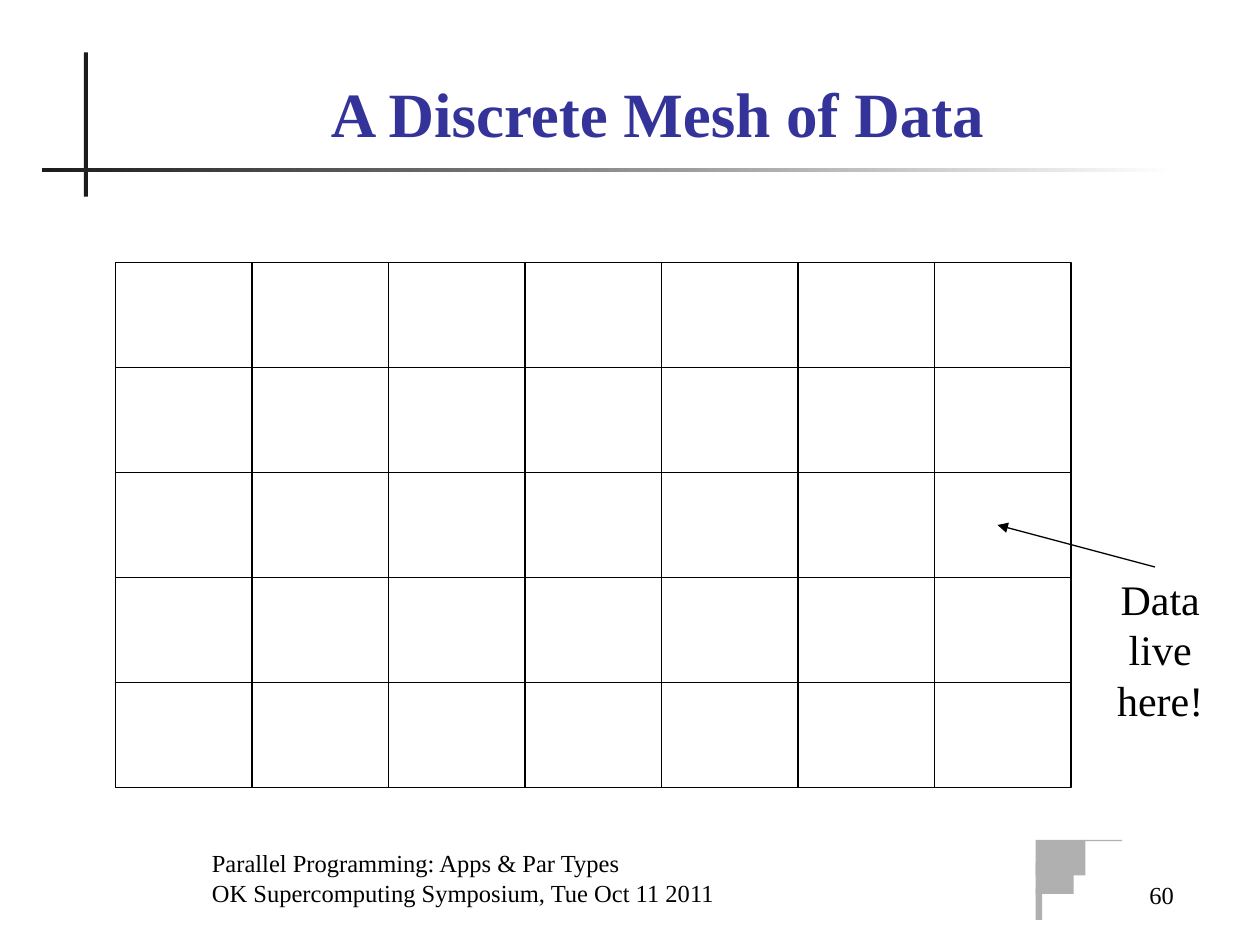
from dataclasses import dataclass

from lxml.etree import SubElement
from pptx import Presentation
from pptx.dml.color import RGBColor
from pptx.enum.shapes import MSO_CONNECTOR, MSO_SHAPE
from pptx.enum.text import MSO_ANCHOR, MSO_AUTO_SIZE, PP_ALIGN
from pptx.oxml.ns import qn
from pptx.shapes.autoshape import Shape
from pptx.slide import Slide
from pptx.util import Emu, Pt

EMU_PER_PX = 9525


@dataclass(frozen=True)
class Theme:
    font: str = "Times New Roman"
    ink: RGBColor = RGBColor(0, 0, 0)
    heading: RGBColor = RGBColor(0x33, 0x33, 0x99)
    rule: RGBColor = RGBColor(0x1C, 0x1C, 0x1C)
    paper: RGBColor = RGBColor(0xFF, 0xFF, 0xFF)
    ornament: RGBColor = RGBColor(0xB0, 0xB0, 0xB0)
    title_size: int = 36
    label_size: int = 24
    footer_size: int = 14
    line_width: float = 0.75


@dataclass(frozen=True)
class Box:
    left: int
    top: int
    width: int
    height: int

    def emu(self) -> tuple[Emu, Emu, Emu, Emu]:
        return px(self.left), px(self.top), px(self.width), px(self.height)


@dataclass(frozen=True)
class Caption:
    box: Box
    lines: tuple[str, ...]
    size: int
    align: PP_ALIGN
    anchor: MSO_ANCHOR
    color: RGBColor
    bold: bool = False


THEME = Theme()
COLUMNS, ROWS = 7, 5
FIRST_CELL = Box(88, 200, 104, 80)
VERTICAL_RULE = Box(64, 40, 3, 110)
HORIZONTAL_RULE = Box(32, 128, 864, 3)
ORNAMENT = (
    Box(789, 640, 38, 27),
    Box(789, 657, 29, 24),
    Box(789, 677, 5, 24),
    Box(826, 640, 29, 1),
)
HEADING = Caption(
    Box(80, 48, 842, 71), ("A Discrete Mesh of Data",), THEME.title_size,
    PP_ALIGN.CENTER, MSO_ANCHOR.BOTTOM, THEME.heading, True,
)
CAPTIONS = (
    Caption(
        Box(768, 650, 136, 48), ("60",), THEME.footer_size,
        PP_ALIGN.RIGHT, MSO_ANCHOR.BOTTOM, THEME.ink,
    ),
    Caption(
        Box(832, 432, 104, 125), ("Data live here!",), THEME.label_size,
        PP_ALIGN.CENTER, MSO_ANCHOR.TOP, THEME.ink,
    ),
    Caption(
        Box(152, 648, 584, 48),
        (
            "Parallel Programming: Apps & Par Types",
            "OK Supercomputing Symposium, Tue Oct 11 2011",
        ),
        THEME.footer_size, PP_ALIGN.LEFT, MSO_ANCHOR.BOTTOM, THEME.ink,
    ),
)


def px(length: int) -> Emu:
    return Emu(length * EMU_PER_PX)


def add_rectangle(slide: Slide, box: Box) -> Shape:
    rectangle = slide.shapes.add_shape(MSO_SHAPE.RECTANGLE, *box.emu())
    rectangle.shadow.inherit = False
    return rectangle


def add_block(slide: Slide, box: Box, color: RGBColor) -> None:
    block = add_rectangle(slide, box)
    block.fill.solid()
    block.fill.fore_color.rgb = color
    block.line.fill.background()


def add_fading_rule(slide: Slide, box: Box) -> None:
    rule = add_rectangle(slide, box)
    rule.fill.gradient()
    rule.fill.gradient_angle = 0
    for stop, color in zip(rule.fill.gradient_stops, (THEME.rule, THEME.paper)):
        stop.color.rgb = color
    rule.line.fill.background()


def add_mesh(slide: Slide) -> None:
    for row in range(ROWS):
        for column in range(COLUMNS):
            cell = add_rectangle(slide, Box(
                FIRST_CELL.left + column * FIRST_CELL.width,
                FIRST_CELL.top + row * FIRST_CELL.height,
                FIRST_CELL.width,
                FIRST_CELL.height,
            ))
            cell.fill.background()
            cell.line.color.rgb = THEME.ink
            cell.line.width = Pt(THEME.line_width)


def add_arrow(slide: Slide, start: tuple[int, int], end: tuple[int, int]) -> None:
    arrow = slide.shapes.add_connector(
        MSO_CONNECTOR.STRAIGHT, *(px(value) for value in start + end)
    )
    arrow.line.color.rgb = THEME.ink
    arrow.line.width = Pt(THEME.line_width)
    SubElement(arrow.line._get_or_add_ln(), qn("a:tailEnd"), type="triangle")
    SubElement(arrow._element.spPr, qn("a:effectLst"))


def write_caption(holder: Shape, caption: Caption) -> None:
    holder.left, holder.top, holder.width, holder.height = caption.box.emu()
    frame = holder.text_frame
    frame.word_wrap = True
    frame.auto_size = MSO_AUTO_SIZE.NONE
    frame.vertical_anchor = caption.anchor
    for index, line in enumerate(caption.lines):
        paragraph = frame.add_paragraph() if index else frame.paragraphs[0]
        paragraph.alignment = caption.align
        run = paragraph.add_run()
        run.text = line
        run.font.name = THEME.font
        run.font.size = Pt(caption.size)
        run.font.bold = caption.bold
        run.font.color.rgb = caption.color


def main() -> None:
    presentation = Presentation()
    presentation.slide_width, presentation.slide_height = px(960), px(720)
    slide = presentation.slides.add_slide(presentation.slide_layouts[5])

    add_block(slide, VERTICAL_RULE, THEME.rule)
    add_fading_rule(slide, HORIZONTAL_RULE)
    for part in ORNAMENT:
        add_block(slide, part, THEME.ornament)
    write_caption(slide.shapes.title, HEADING)
    add_mesh(slide)
    add_arrow(slide, (880, 432), (760, 400))
    for caption in CAPTIONS:
        write_caption(slide.shapes.add_textbox(*caption.box.emu()), caption)

    presentation.save("out.pptx")


if __name__ == "__main__":
    main()
